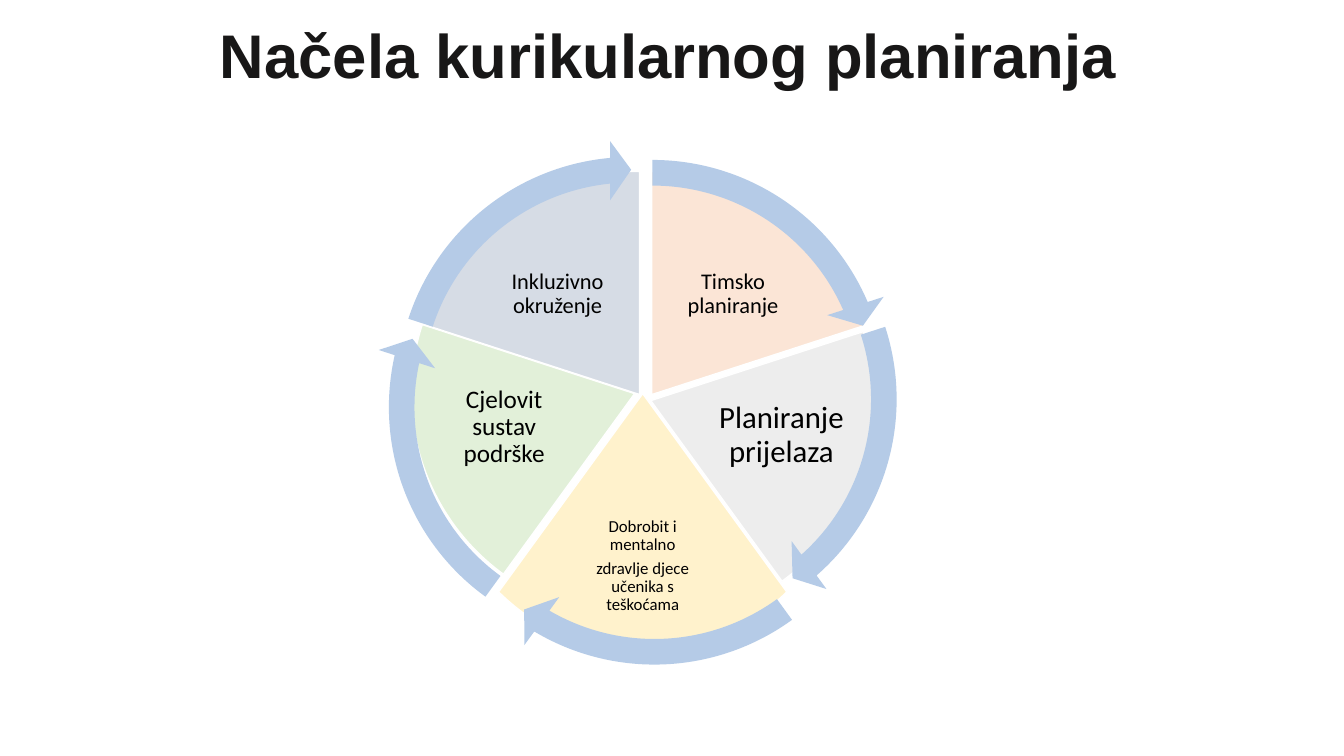
"""Build a slide with a five-part cycle of curriculum planning principles."""
from dataclasses import dataclass

from pptx import Presentation
from pptx.dml.color import RGBColor
from pptx.enum.shapes import MSO_SHAPE
from pptx.enum.text import MSO_ANCHOR, MSO_AUTO_SIZE, PP_ALIGN
from pptx.util import Inches, Pt

PIE = MSO_SHAPE.PIE
CIRCULAR_ARROW = MSO_SHAPE.CIRCULAR_ARROW
MIDDLE = MSO_ANCHOR.MIDDLE
NO_AUTOFIT = MSO_AUTO_SIZE.NONE
LEFT = PP_ALIGN.LEFT
CENTER = PP_ALIGN.CENTER

FULL_TURN = 216
FIRST_ANGLE = 162
PIE_SIZE = 4.43
ARROW_SIZE = 4.98
ARROW_WIDTH = 0.051
ARROW_HEAD_WIDTH = 0.059
ARROW_HEAD_ANGLE = 3.275
ARROW_COLOUR = "B5CBE7"


@dataclass(frozen=True)
class Box:
    """A rectangle in inches."""

    left: float
    top: float
    width: float
    height: float

    def lengths(self):
        """Return the four measures as slide lengths."""
        return tuple(map(Inches, (self.left, self.top, self.width, self.height)))


@dataclass(frozen=True)
class Principle:
    """One slice of the cycle with its label and arrow."""

    lines: tuple[str, ...]
    font_size: int
    fill: str
    slice_box: Box
    label_box: Box
    arrow_box: Box


def pie_box(left: float, top: float, height: float = PIE_SIZE) -> Box:
    """Return the box of a slice."""
    return Box(left, top, PIE_SIZE, height)


def arrow_box(left: float, top: float) -> Box:
    """Return the box of an arrow."""
    return Box(left, top, ARROW_SIZE, ARROW_SIZE)


PRINCIPLES = (
    Principle(("Timsko planiranje",), 16, "FBE5D6", pie_box(4.25, 1.7),
              Box(6.56, 2.44, 1.42, 0.95), arrow_box(3.98, 1.42)),
    Principle(("Planiranje prijelaza",), 22, "EDEDED", pie_box(4.24, 1.76),
              Box(7.09, 3.79, 1.32, 1.06), arrow_box(4.08, 1.47)),
    Principle(("Dobrobit i mentalno", "zdravlje djece učenika s teškoćama"),
              12, "FFF2CC", pie_box(4.16, 1.33, 5.15),
              Box(5.74, 4.94, 1.27, 1.35), arrow_box(4, 1.78)),
    Principle(("Cjelovit sustav podrške",), 18, "E2F0D9", pie_box(4.08, 1.69),
              Box(4.34, 3.71, 1.32, 1.06), arrow_box(3.69, 1.55)),
    Principle(("Inkluzivno okruženje",), 16, "D6DCE5", pie_box(4.13, 1.7),
              Box(4.82, 2.44, 1.42, 0.95), arrow_box(3.77, 1.39)),
)
STEP = FULL_TURN / len(PRINCIPLES)


def colour(value: str) -> RGBColor:
    """Turn a hex string into a colour."""
    return RGBColor.from_string(value)


def angle_at(index: int) -> float:
    """Return the angle where the given slice starts."""
    return (FIRST_ANGLE + index * STEP) % FULL_TURN


def format_paragraph(paragraph, font_name: str, size: int, hex_colour: str, alignment) -> None:
    """Set the font, alignment and line spacing of a paragraph."""
    paragraph.alignment = alignment
    paragraph.line_spacing = 0.9
    paragraph.font.name = font_name
    paragraph.font.size = Pt(size)
    paragraph.font.color.rgb = colour(hex_colour)


def add_title(page, text: str) -> None:
    """Place and format the slide title."""
    title = page.shapes.title
    title.left, title.top, title.width, title.height = Box(2.08, 0, 9.58, 1.17).lengths()
    title.text_frame.text = text
    title.text_frame.auto_size = NO_AUTOFIT
    title.text_frame.vertical_anchor = MIDDLE
    paragraph = title.text_frame.paragraphs[0]
    format_paragraph(paragraph, "Arial", 44, "181717", LEFT)
    paragraph.font.bold = True


def add_filled_shape(page, kind, box: Box, fill: str, adjustments: tuple[float, ...]):
    """Add a flat shape with its adjustments."""
    shape = page.shapes.add_shape(kind, *box.lengths())
    shape.shadow.inherit = False
    shape.fill.solid()
    shape.fill.fore_color.rgb = colour(fill)
    for position, value in enumerate(adjustments):
        shape.adjustments[position] = value
    return shape


def add_slice(page, principle: Principle, index: int) -> None:
    """Add a white-edged slice."""
    angles = (angle_at(index), angle_at(index + 1))
    shape = add_filled_shape(page, PIE, principle.slice_box, principle.fill, angles)
    shape.line.color.rgb = colour("FFFFFF")
    shape.line.width = Pt(1)


def add_label(page, principle: Principle) -> None:
    """Add the text of a slice."""
    frame = page.shapes.add_textbox(*principle.label_box.lengths()).text_frame
    frame.word_wrap = True
    frame.vertical_anchor = MIDDLE
    margin = Inches(0.02)
    frame.margin_left = frame.margin_right = margin
    frame.margin_top = frame.margin_bottom = margin
    frame.text = "\n".join(principle.lines)
    for paragraph in frame.paragraphs:
        format_paragraph(paragraph, "Calibri", principle.font_size, "000000", CENTER)
        paragraph.space_after = Pt(0.35 * principle.font_size)


def add_arrow(page, principle: Principle, index: int) -> None:
    """Add the arrow that runs along the rim of a slice."""
    adjustments = (ARROW_WIDTH, ARROW_HEAD_ANGLE, angle_at(index + 1) - ARROW_HEAD_ANGLE,
                   angle_at(index), ARROW_HEAD_WIDTH)
    shape = add_filled_shape(page, CIRCULAR_ARROW, principle.arrow_box,
                             ARROW_COLOUR, adjustments)
    shape.line.fill.background()


def main() -> None:
    """Build and save the deck."""
    deck = Presentation()
    deck.slide_width = Inches(13.33)
    deck.slide_height = Inches(7.5)
    page = deck.slides.add_slide(deck.slide_layouts.get_by_name("Title Only"))
    add_title(page, "Načela kurikularnog planiranja")
    for index, principle in enumerate(PRINCIPLES):
        add_slice(page, principle, index)
        add_label(page, principle)
    for index, principle in enumerate(PRINCIPLES):
        add_arrow(page, principle, index)
    deck.save("out.pptx")


if __name__ == "__main__":
    main()
